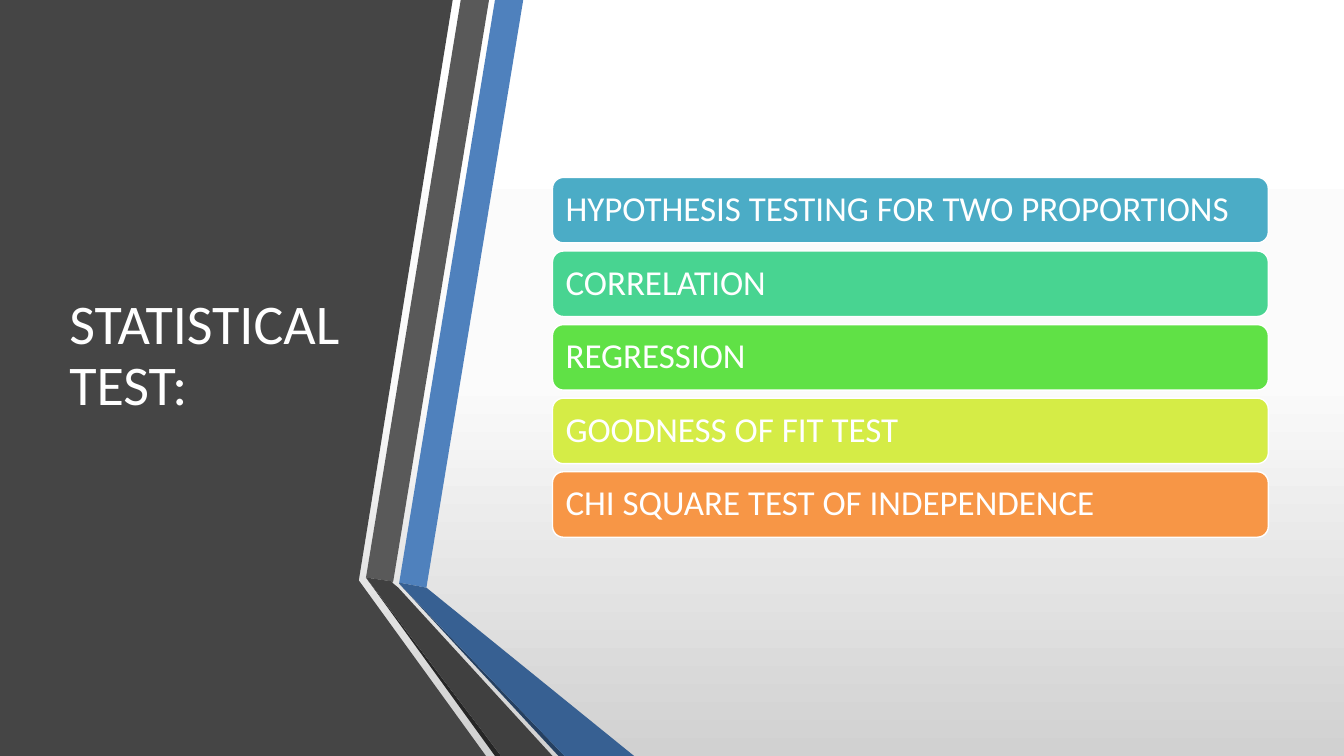
import copy
import pptx
import pptx.util
import pptx.dml.color
import pptx.enum.shapes
import pptx.enum.text
import pptx.oxml.ns

Inches = pptx.util.Inches
Pt = pptx.util.Pt
RGBColor = pptx.dml.color.RGBColor

FONT = "Calibri"
WHITE = RGBColor(0xFF, 0xFF, 0xFF)
PALE = RGBColor(0xFB, 0xFB, 0xFB)
SILVER = RGBColor(0xD1, 0xD1, 0xD1)
SLATE = RGBColor(0x45, 0x45, 0x45)
BLUE = RGBColor(0x4F, 0x81, 0xBD)
GRAY = RGBColor(0x59, 0x59, 0x59)
COAL = RGBColor(0x26, 0x26, 0x26)
NAVY = RGBColor(0x25, 0x40, 0x61)
DENIM = RGBColor(0x37, 0x60, 0x92)
IRON = RGBColor(0x40, 0x40, 0x40)
TEAL = RGBColor(0x4B, 0xAC, 0xC6)
MINT = RGBColor(0x48, 0xD4, 0x91)
GREEN = RGBColor(0x60, 0xE1, 0x46)
LIME = RGBColor(0xD5, 0xEC, 0x46)
ORANGE = RGBColor(0xF7, 0x96, 0x46)

PANELS = [
    (SLATE, [(0, 0), (4.49, 0), (3.56, 5.75), (3.56, 5.76), (4.82, 7.5), (0, 7.5)]),
    (BLUE, [(3.96, 5.78), (4.23, 5.83), (5.19, 0), (4.91, 0)]),
    (GRAY, [(4.85, 0), (4.57, 0), (3.63, 5.73), (3.9, 5.77)]),
    (COAL, [(3.63, 5.73), (4.91, 7.5), (4.97, 7.5)]),
    (NAVY, [(3.96, 5.79), (5.54, 7.5), (5.6, 7.5)]),
    (DENIM, [(3.96, 5.79), (5.6, 7.5), (6.29, 7.5), (4.23, 5.83), (3.96, 5.78)]),
    (IRON, [(5.48, 7.5), (3.95, 5.83), (3.89, 5.78), (3.9, 5.77), (3.63, 5.73), (4.97, 7.5)]),
]

TESTS = [
    ("HYPOTHESIS TESTING FOR TWO PROPORTIONS", TEAL),
    ("CORRELATION", MINT),
    ("REGRESSION", GREEN),
    ("GOODNESS OF FIT TEST", LIME),
    ("CHI SQUARE TEST OF INDEPENDENCE", ORANGE),
]


def shade(slide):
    """Fill the background with a vertical three-stop gradient."""
    fill = slide.background.fill
    fill.gradient()
    fill.gradient_angle = 270
    stops = slide.element.find(".//" + pptx.oxml.ns.qn("a:gsLst"))
    stops.insert(1, copy.deepcopy(stops[0]))
    for stop, place, color in zip(fill.gradient_stops, (0, 0.5, 1), (WHITE, PALE, SILVER)):
        stop.position = place
        stop.color.rgb = color


def panel(slide, color, points):
    """Draw a closed, borderless polygon."""
    start, *rest = [(Inches(x), Inches(y)) for x, y in points]
    pen = slide.shapes.build_freeform(*start)
    pen.add_line_segments(rest, close=True)
    shape = pen.convert_to_shape()
    shape.shadow.inherit = False
    shape.fill.solid()
    shape.fill.fore_color.rgb = color
    shape.line.fill.background()


def write(shape, text, size):
    """Set left-aligned white text, centred vertically."""
    frame = shape.text_frame
    frame.word_wrap = True
    frame.vertical_anchor = pptx.enum.text.MSO_ANCHOR.MIDDLE
    para = frame.paragraphs[0]
    para.alignment = pptx.enum.text.PP_ALIGN.LEFT
    para.line_spacing = 0.9
    run = para.add_run()
    run.text = text
    run.font.name = FONT
    run.font.size = Pt(size)
    run.font.color.rgb = WHITE


def title(slide, text):
    """Place the title on the dark panel."""
    box = slide.shapes.add_textbox(Inches(0.59), Inches(0.75), Inches(3.04), Inches(5.58))
    write(box, text, 40)


def bar(slide, top, text, color):
    """Draw one rounded bar with its label."""
    shape = slide.shapes.add_shape(
        pptx.enum.shapes.MSO_SHAPE.ROUNDED_RECTANGLE,
        Inches(5.48), Inches(top), Inches(7.1), Inches(0.65))
    shape.shadow.inherit = False
    shape.fill.solid()
    shape.fill.fore_color.rgb = color
    shape.line.color.rgb = WHITE
    shape.line.width = Pt(1)
    write(shape, text, 25)


def main():
    """Build the slide and save it."""
    deck = pptx.Presentation()
    deck.slide_width = Inches(13.33)
    deck.slide_height = Inches(7.5)
    slide = deck.slides.add_slide(deck.slide_layouts[6])
    shade(slide)
    for color, points in PANELS:
        panel(slide, color, points)
    title(slide, "STATISTICAL TEST:")
    for row, (text, color) in enumerate(TESTS):
        bar(slide, 1.76 + 0.73 * row, text, color)
    deck.save("out.pptx")


if __name__ == "__main__":
    main()
